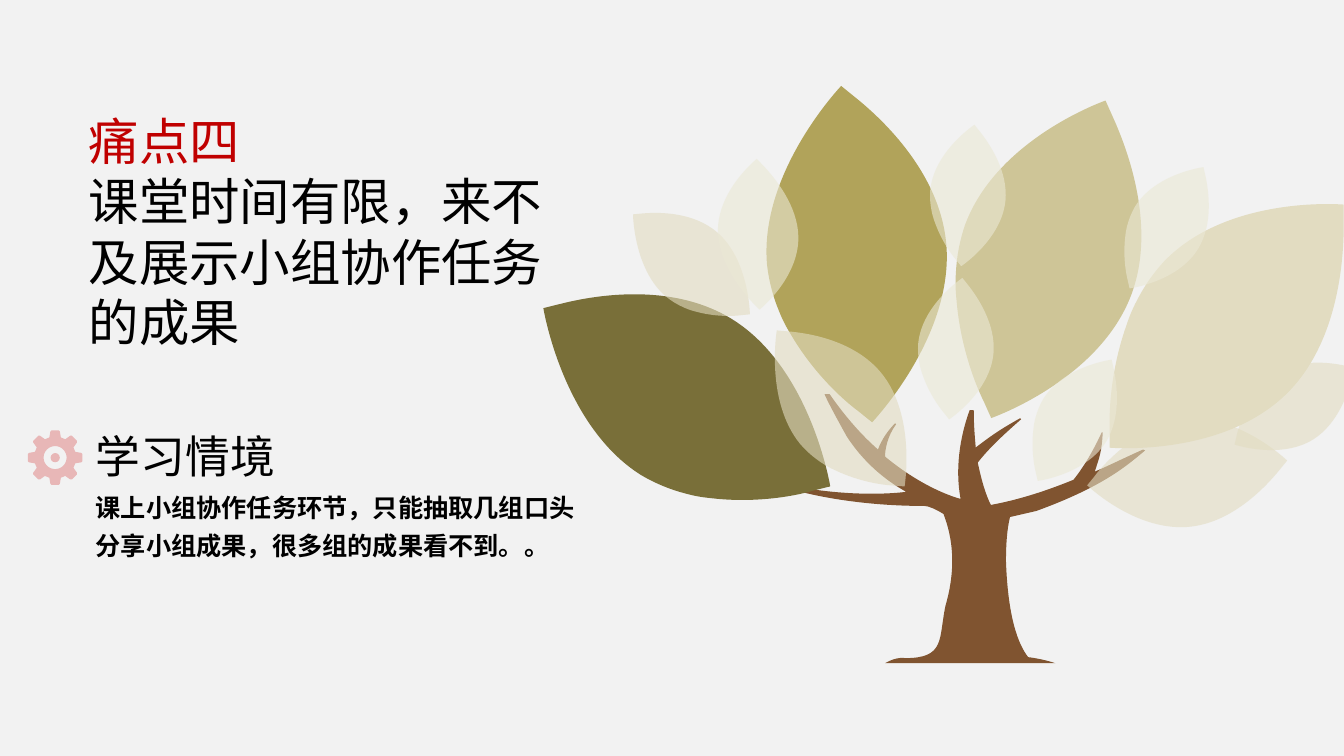
import math

import lxml.etree
import pptx
import pptx.dml.color
import pptx.enum.shapes
import pptx.enum.text
import pptx.oxml.ns
import pptx.util

Pt = pptx.util.Pt
qn = pptx.oxml.ns.qn

THEME = {
    "background": "F2F2F2", "ink": "000000", "accent": "C00000",
    "bark": "805430", "gear": "E8B7B7",
    "olive": "796F39", "moss": "B1A35A", "khaki": "CEC597",
    "sand": "E2DCC1", "cream": "EBE8D5", "sheer": 60,
    "heading_font": "Open Sans", "body_font": "Lato",
    "title_size": 36, "heading_size": 32, "body_size": 18,
}

# Outlines: a start point, then segments of one point (line) or three (curve).
TRUNK_SCALE = 0.72
TRUNK_START = (153, 119)
TRUNK = [
    (162, 142, 166, 172, 155, 210), (148, 243, 155, 262, 115, 262),
    (115, 262, 107, 260, 95, 267), (264, 267),
    (255, 264, 245, 262, 237, 261), (227, 248, 217, 222, 215, 166),
    (215, 149, 216, 134, 219, 122), (245, 116),
    (314, 91, 337, 69, 353, 56), (351, 55),
    (333, 63, 317, 71, 303, 77), (308, 62, 310, 57, 311, 38), (310, 38),
    (306, 47, 295, 69, 282, 85), (243, 101, 216, 107, 200, 110),
    (195, 100, 191, 87, 187, 68), (200, 51, 221, 33, 230, 25), (229, 24),
    (206, 37, 201, 41, 185, 53), (184, 42, 183, 30, 183, 16), (179, 16),
    (173, 32, 163, 67, 170, 104), (170, 104, 136, 96, 95, 62),
    (95, 56, 97, 42, 106, 30), (105, 29),
    (99, 35, 92, 44, 88, 55), (72, 41, 56, 23, 40, 0), (35, 0),
    (38, 8, 57, 42, 57, 42), (70, 62, 89, 82, 116, 97),
    (116, 97, 69, 104, 2, 91), (0, 94),
    (28, 102, 75, 111, 134, 111), (138, 111, 145, 114, 153, 119),
]

# The leaf is drawn in percent of its box
LEAF_START = (99.6, 10.7)
LEAF = [
    (99.6, 3.8), (99.6, 3.8, 50.6, 0, 23.2, 25.3),
    (2.6, 44.4, 0, 74.3, 0, 88.5), (0, 96.2),
    (0, 96.2, 48.9, 100, 76.4, 74.7), (81.1, 70.1, 85, 65.1, 88, 59.8),
    (90.1, 56.3, 91.4, 53.3, 92.7, 49.8), (98.7, 34.5, 100, 19.2, 99.6, 10.7),
]

# Left, top, width, height, rotation, colour, opacity
SMALL = (70.6, 79.2)
SHEER = THEME["sheer"]
LEAVES = [
    (797.8, 281.5, 100.1, 112.3, 219.1, "sand", SHEER),
    (403.9, 193, 173.5, 182.2, 76.1, "olive", 100),
    (524.9, 90.7, 173.5, 182.2, 129, "moss", 100),
    (664.6, 91.4, 167.8, 187.9, 155.9, "khaki", 100),
    (792, 139, 167.8, 187.9, 180, "sand", 100),
    (548.6, 237.6, 103.7, 108.7, 94.9, "sand", SHEER),
    (655.9, 100.1, *SMALL, 141.5, "cream", SHEER),
    (797.8, 123.1, *SMALL, 167.5, "cream", SHEER),
    (454.3, 147.6, 79.2, 82.8, 84.7, "sand", SHEER),
    (504.7, 124.6, 73.4, 85.7, 136.3, "cream", SHEER),
    (647.3, 209.5, *SMALL, 141.5, "cream", SHEER),
    (732.2, 260.6, *SMALL, 167.5, "cream", SHEER),
    (889.2, 250.6, *SMALL, 193.6, "sand", SHEER),
]

# Half of one gear tooth, seen from the gear's centre
TOOTH_SIDE = [(-4.1, -14.4), (-3.4, -18.7), (-2.6, -19.5)]
TEETH, HOLE_RADIUS, HUB_RADIUS = 8, 8.2, 3.3


def rgb(name):
    return pptx.dml.color.RGBColor.from_string(THEME[name])


def paint(shape, colour, opacity=100):
    shape.shadow.inherit = False
    shape.line.fill.background()
    shape.fill.solid()
    shape.fill.fore_color.rgb = rgb(colour)
    if opacity < 100:
        tone = shape.fill._xPr.find(qn("a:solidFill"))[0]
        lxml.etree.SubElement(tone, qn("a:alpha"), val=str(opacity * 1000))


def add_outline(shapes, start, segments, left, top, scale_x, scale_y):
    """Lay out all curve points as lines, then join each three into a curve."""
    def place(x, y):
        return Pt(left + x * scale_x), Pt(top + y * scale_y)

    builder = shapes.build_freeform(*place(*start), scale=1.0)
    for segment in segments:
        builder.add_line_segments(
            [place(*pair) for pair in zip(segment[::2], segment[1::2])], close=False)
    builder.add_line_segments([], close=True)
    shape = builder.convert_to_shape()

    lines = iter(list(shape._element.iter(qn("a:lnTo"))))
    for segment in segments:
        first = next(lines)
        if len(segment) == 6:
            first.tag = qn("a:cubicBezTo")
            for _ in range(2):
                control = next(lines)
                first.append(control[0])
                control.getparent().remove(control)
    return shape


def add_tree(slide):
    tree = slide.shapes.add_group_shape().shapes
    trunk = add_outline(tree, TRUNK_START, TRUNK, 563.8, 281.5, TRUNK_SCALE, TRUNK_SCALE)
    paint(trunk, "bark")
    for left, top, width, height, rotation, colour, opacity in LEAVES:
        leaf = add_outline(tree, LEAF_START, LEAF, left, top, width / 100, height / 100)
        leaf.rotation = rotation
        paint(leaf, colour, opacity)


def add_gear(slide, x, y):
    gear = slide.shapes.add_group_shape().shapes
    hub = gear.add_shape(
        pptx.enum.shapes.MSO_SHAPE.OVAL, Pt(x - HUB_RADIUS), Pt(y - HUB_RADIUS),
        Pt(2 * HUB_RADIUS), Pt(2 * HUB_RADIUS))
    paint(hub, "gear")

    def turn(px, py, angle):
        cos, sin = math.cos(angle), math.sin(angle)
        return Pt(x + px * cos - py * sin), Pt(y + px * sin + py * cos)

    tooth = TOOTH_SIDE + [(-px, py) for px, py in reversed(TOOTH_SIDE)]
    rim = [turn(*point, math.tau * i / TEETH) for i in range(TEETH) for point in tooth]
    hole = [turn(0, -HOLE_RADIUS, -math.tau * i / 48) for i in range(48)]
    builder = gear.build_freeform(*rim[0], scale=1.0)
    builder.add_line_segments(rim[1:], close=True)
    builder.move_to(*hole[0])
    builder.add_line_segments(hole[1:], close=True)
    paint(builder.convert_to_shape(), "gear")


def add_text(slide, left, top, width, height, lines, font, size, bold=False, spacing=None):
    box = slide.shapes.add_textbox(Pt(left), Pt(top), Pt(width), Pt(height))
    frame = box.text_frame
    frame_format = {
        "margin_left": 0, "margin_top": 0, "margin_right": 0, "margin_bottom": 0,
        "word_wrap": True, "auto_size": pptx.enum.text.MSO_AUTO_SIZE.SHAPE_TO_FIT_TEXT,
    }
    for key, value in frame_format.items():
        setattr(frame, key, value)
    for i, (text, colour) in enumerate(lines):
        paragraph = frame.add_paragraph() if i else frame.paragraphs[0]
        paragraph.line_spacing = spacing
        run = paragraph.add_run()
        run.text = text
        run.font.color.rgb = rgb(colour)
        run_format = {"name": THEME[font], "size": Pt(THEME[size]), "bold": bold}
        for key, value in run_format.items():
            setattr(run.font, key, value)


def main():
    deck = pptx.Presentation()
    deck.slide_width, deck.slide_height = Pt(960), Pt(540)
    slide = deck.slides.add_slide(deck.slide_layouts[6])
    slide.background.fill.solid()
    slide.background.fill.fore_color.rgb = rgb("background")

    # Illustration and icon
    add_tree(slide)
    add_gear(slide, 39.4, 326.9)

    # Learning situation
    add_text(slide, 68.4, 346.3, 355, 51.8,
             [("课上小组协作任务环节，只能抽取几组口头分享小组成果，很多组的成果看不到。。", "ink")],
             "body_font", "body_size", bold=True, spacing=1.25)
    add_text(slide, 68.4, 306, 244.8, 38.9, [("学习情境", "ink")],
             "heading_font", "heading_size")

    # Title
    add_text(slide, 63.4, 78.5, 355, 174.2,
             [("痛点四", "accent"), ("课堂时间有限，来不及展示小组协作任务的成果", "ink")],
             "heading_font", "title_size")

    deck.save("out.pptx")


if __name__ == "__main__":
    main()
